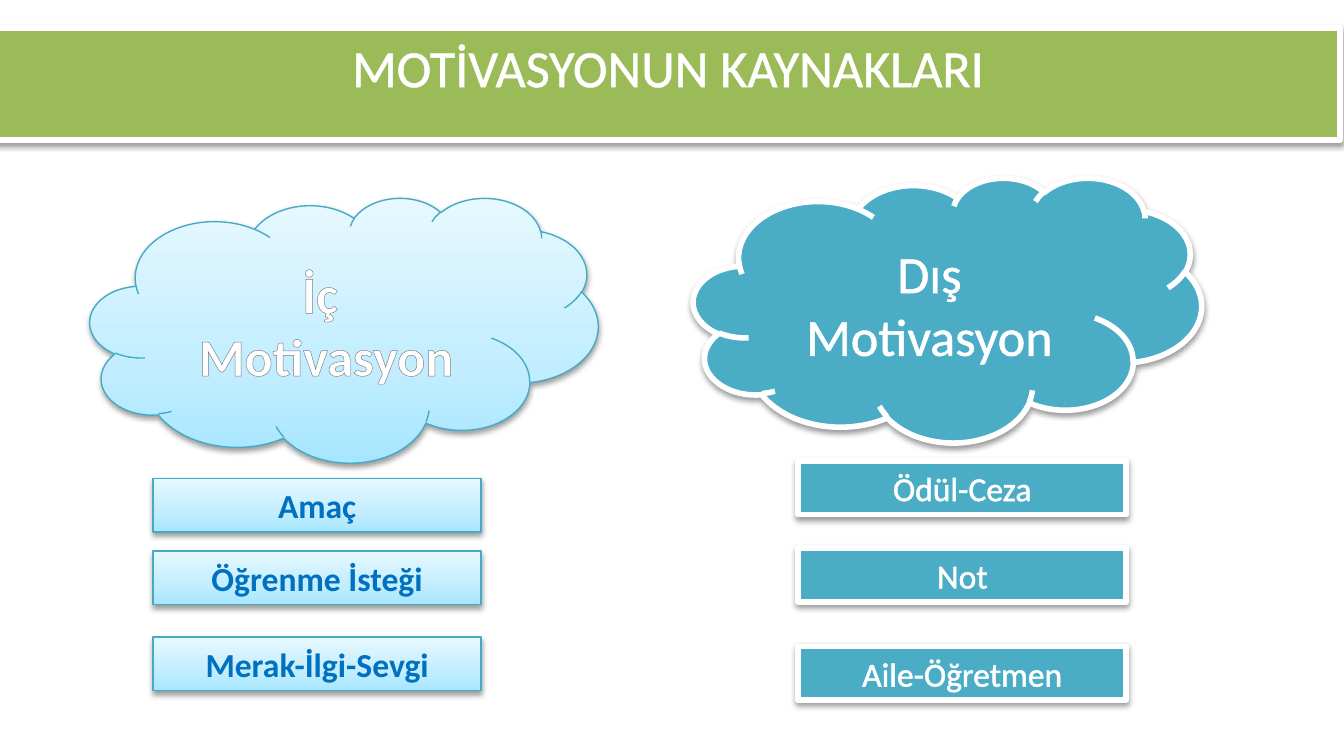
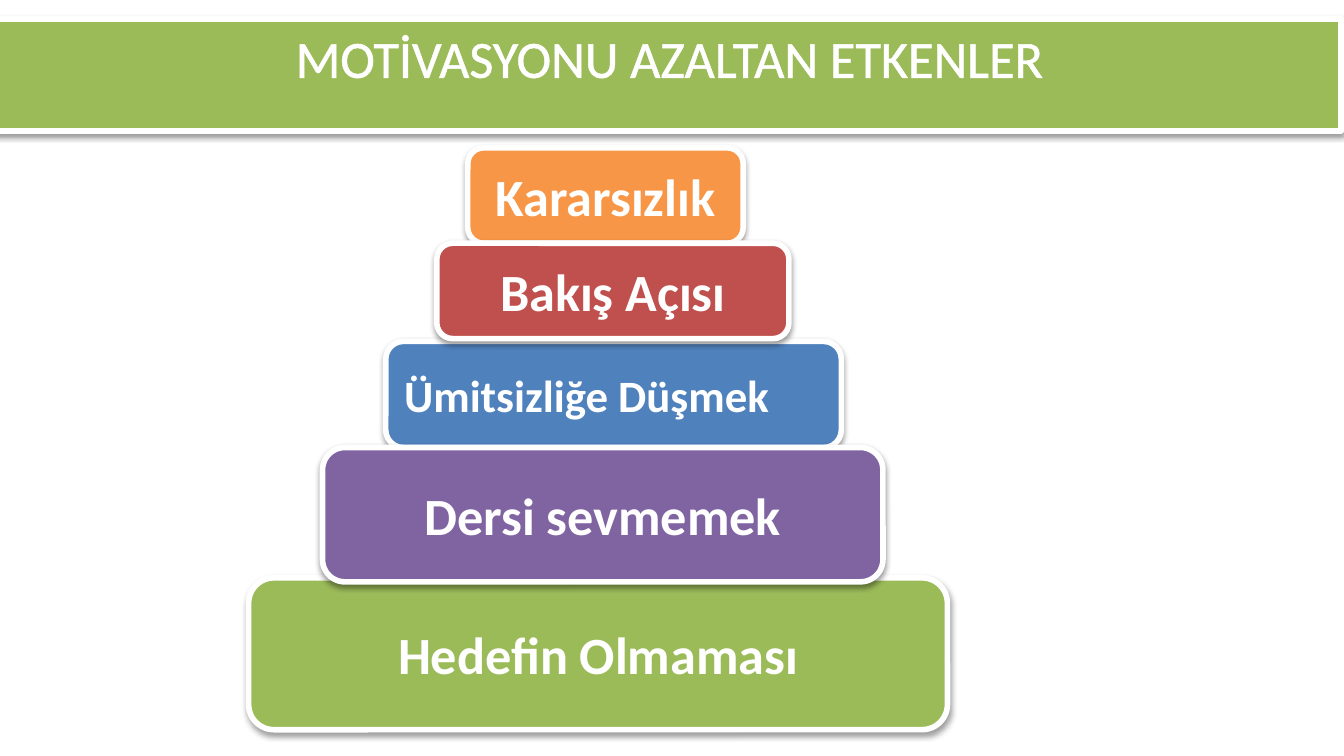
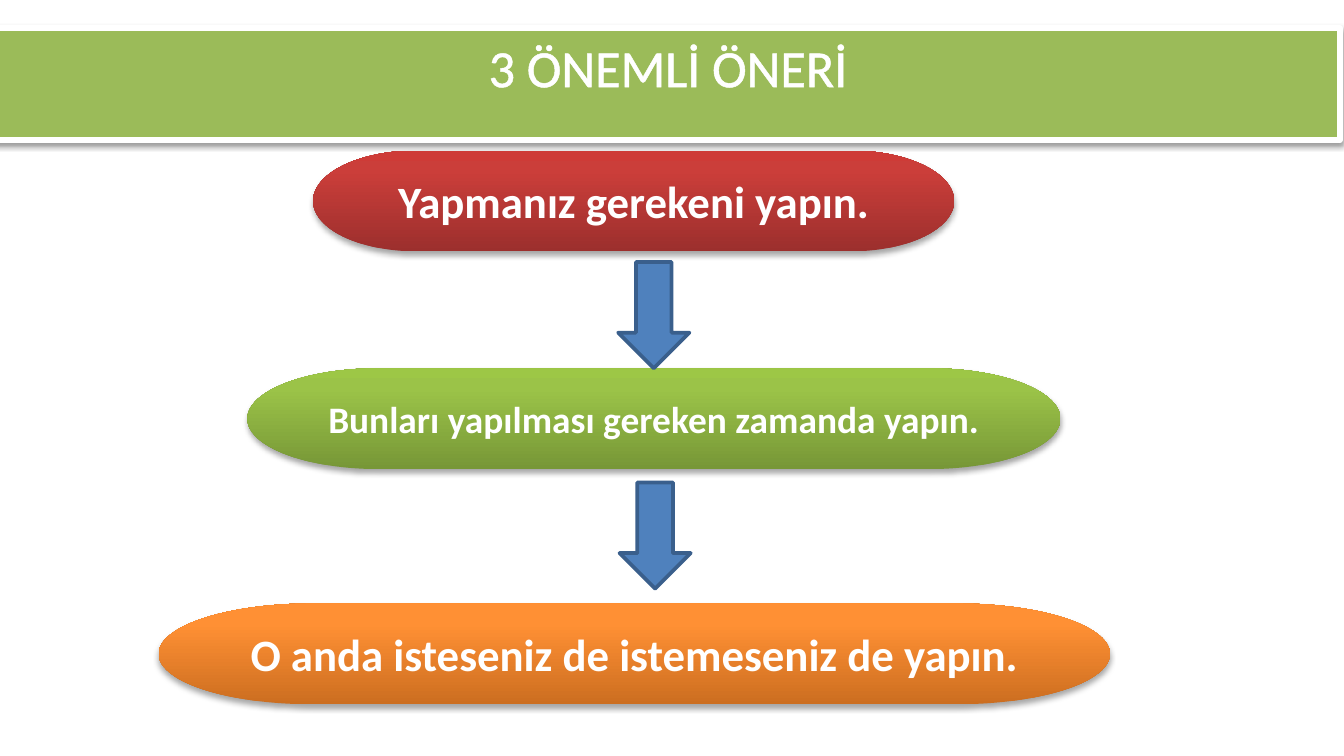
from dataclasses import dataclass

from lxml import etree
from pptx import Presentation
from pptx.dml.color import RGBColor
from pptx.enum.shapes import MSO_SHAPE
from pptx.enum.text import MSO_ANCHOR, MSO_AUTO_SIZE, PP_ALIGN
from pptx.oxml.ns import qn
from pptx.util import Inches, Pt

RECT = MSO_SHAPE.RECTANGLE
ROUNDED = MSO_SHAPE.ROUNDED_RECTANGLE
CLOUD = MSO_SHAPE.CLOUD
PILL = MSO_SHAPE.FLOWCHART_TERMINATOR
DOWN_ARROW = MSO_SHAPE.DOWN_ARROW
LEFT, CENTER = PP_ALIGN.LEFT, PP_ALIGN.CENTER
TOP, MIDDLE = MSO_ANCHOR.TOP, MSO_ANCHOR.MIDDLE
GROW = MSO_AUTO_SIZE.SHAPE_TO_FIT_TEXT

COLS, ROWS = 100, 56.25
TITLE_ONLY = 5


@dataclass(frozen=True)
class Theme:
    font: str = "Calibri"
    white: str = "FFFFFF"
    green: str = "9BBB59"
    teal: str = "4BACC6"
    blue: str = "4F81BD"
    red: str = "C0504D"
    purple: str = "8064A2"
    orange: str = "F79646"
    sky_line: str = "46AAC5"
    arrow_line: str = "3A5F8C"
    label: str = "0070C0"
    text_edge: str = "7D7D7D"
    sky: tuple = ((0, "A7E6FF"), (35, "C1EDFF"), (100, "E7F8FF"))
    deep_red: tuple = ((0, "9C2F2D"), (80, "CB3E3A"), (100, "CE3B37"))
    deep_green: tuple = ((0, "779737"), (80, "9BC348"), (100, "9DC746"))
    deep_orange: tuple = ((0, "CC6E20"), (80, "FF9034"), (100, "FF9136"))
    metal: tuple = ((0, "FFFFFF"), (9, "FFFFFF"), (50, "7F7F7F"),
                    (79, "FFFFFF"), (100, "FFFFFF"))
    big: int = 28
    medium: int = 24
    body: int = 20
    small: int = 18


T = Theme()


def node(tag, **attrs):
    return etree.Element(qn(tag), {k: str(v) for k, v in attrs.items()})


def solid(color):
    fill = node("a:solidFill")
    fill.append(node("a:srgbClr", val=color))
    return fill


def gradient(stops, angle):
    fill = node("a:gradFill", rotWithShape=1)
    gs_lst = node("a:gsLst")
    for pos, color in stops:
        gs = node("a:gs", pos=pos * 1000)
        gs.append(node("a:srgbClr", val=color))
        gs_lst.append(gs)
    fill.append(gs_lst)
    fill.append(node("a:lin", ang=angle * 60000, scaled=0))
    return fill


def set_fill(fill, parent, paint, angle):
    if isinstance(paint, str):
        fill.solid()
        fill.fore_color.rgb = RGBColor.from_string(paint)
    else:
        fill.background()
        parent.replace(parent.find(qn("a:noFill")), gradient(paint, angle))


class Deck:
    def __init__(self):
        self.prs = Presentation()
        self.prs.slide_width = Inches(10)
        self.prs.slide_height = Inches(5.625)
        self.slide = None

    def box(self, x, y, w, h):
        col = self.prs.slide_width / COLS
        row = self.prs.slide_height / ROWS
        return [round(v) for v in (x * col, y * row, w * col, h * row)]

    def style(self, sp, fill, line=None, width=0.75, shadow=38, dist=1.6):
        set_fill(sp.fill, sp._element.spPr, fill, 270)
        if line:
            sp.line.color.rgb = RGBColor.from_string(line)
            sp.line.width = Pt(width)
        else:
            sp.line.fill.background()
        sp.shadow.inherit = False
        if shadow:
            cast = node("a:outerShdw", blurRad=Pt(3.1), dist=Pt(dist),
                        dir=90 * 60000, rotWithShape=0)
            color = node("a:srgbClr", val="000000")
            color.append(node("a:alpha", val=shadow * 1000))
            cast.append(color)
            sp._element.spPr.find(qn("a:effectLst")).append(cast)

    def text(self, sp, lines, size, color=T.white, bold=False, edge=None,
             edge_width=1.45, align=CENTER, anchor=MIDDLE, grow=False):
        tf = sp.text_frame
        tf.word_wrap = True
        tf.vertical_anchor = anchor
        if grow:
            tf.auto_size = GROW
        for i, line in enumerate(lines):
            p = tf.add_paragraph() if i else tf.paragraphs[0]
            p.alignment = align
            r = p.add_run()
            r.text = line
            r.font.name = T.font
            r.font.size = Pt(size)
            r.font.bold = bold
            rPr = r._r.get_or_add_rPr()
            set_fill(r.font.fill, rPr, color, 90)
            if edge:
                ln = node("a:ln", w=Pt(edge_width))
                ln.append(solid(edge))
                rPr.insert(0, ln)
        return tf

    def shape(self, kind, box, fill, **style):
        sp = self.slide.shapes.add_shape(kind, *self.box(*box))
        self.style(sp, fill, **style)
        return sp

    def titled(self, title, x=-0.3, y=2.1):
        layout = self.prs.slide_layouts[TITLE_ONLY]
        self.slide = self.prs.slides.add_slide(layout)
        sp = self.slide.shapes.title
        sp.left, sp.top, sp.width, sp.height = self.box(x, y, 100, 5.7)
        self.style(sp, T.green, line=T.white, width=3)
        self.text(sp, [title], T.big, edge=T.white, anchor=TOP, grow=True)

    def cloud(self, x, y, lines, look, **font):
        sp = self.shape(CLOUD, (x, y, 37.8, 19.7), **look)
        self.text(sp, lines, T.big, **font)

    def label(self, x, y, line, look, **font):
        sp = self.shape(RECT, (x, y, 24.4, 4), **look)
        self.text(sp, [line], T.small, anchor=TOP, grow=True, **font)

    def block(self, box, line, fill, size=T.big, align=CENTER):
        sp = self.shape(ROUNDED, box, fill, line=T.white, width=3)
        self.text(sp, [line], size, bold=True, align=align)

    def pill(self, x, y, w, line, fill, size=T.medium):
        sp = self.shape(PILL, (x, y, w, 7.5), fill, shadow=35, dist=1.8)
        return self.text(sp, [line], size, bold=True)

    def arrow(self, x, y):
        self.shape(DOWN_ARROW, (x, y, 5.3, 7.9), T.blue,
                   line=T.arrow_line, width=2, shadow=0)


deck = Deck()

deck.titled("MOTİVASYONUN KAYNAKLARI")
inner = dict(fill=T.sky, line=T.sky_line)
outer = dict(fill=T.teal, line=T.white, width=3)
deck.cloud(6.7, 14.7, ["İç ", "Motivasyon"], inner, color=T.metal,
           bold=True, edge=T.text_edge, edge_width=0.83)
deck.cloud(51.6, 13.2, ["Dış", "Motivasyon"], outer, edge=T.white)
for y, line in ((35.6, "Amaç"), (41, "Öğrenme İsteği"),
                (47.4, "Merak-İlgi-Sevgi")):
    deck.label(11.4, y, line, inner, color=T.label, bold=True)
for y, line in ((34.3, "Ödül-Ceza"), (40.8, "Not"),
                (48.1, "Aile-Öğretmen")):
    deck.label(59.4, y, line, outer, edge=T.white)

deck.titled("MOTİVASYONU AZALTAN ETKENLER", x=-0.2, y=1.4)
deck.block((28.7, 25.4, 33.9, 7.9), "Ümitsizliğe Düşmek", T.blue,
           size=T.medium, align=LEFT)
for box, line, fill in (
        ((18.5, 43, 52, 11.3), "Hedefin Olmaması", T.green),
        ((34.8, 11, 20.5, 7.1), "Kararsızlık", T.orange),
        ((24, 33.3, 41.7, 10), "Dersi sevmemek", T.purple),
        ((32.5, 18.1, 26.2, 7.1), "Bakış Açısı", T.red)):
    deck.block(box, line, fill)

deck.titled("3 ÖNEMLİ ÖNERİ")
deck.pill(23.3, 11.2, 47.7, "Yapmanız gerekeni yapın.", T.deep_red)
deck.pill(11.8, 44.9, 70.8, "O anda isteseniz de istemeseniz de yapın.",
          T.deep_orange)
deck.pill(18.4, 27.4, 60.5, "Bunları yapılması gereken zamanda yapın.",
          T.deep_green, size=T.body)
deck.arrow(46, 19.5)
deck.arrow(46.1, 35.9)

deck.prs.save("out.pptx")
